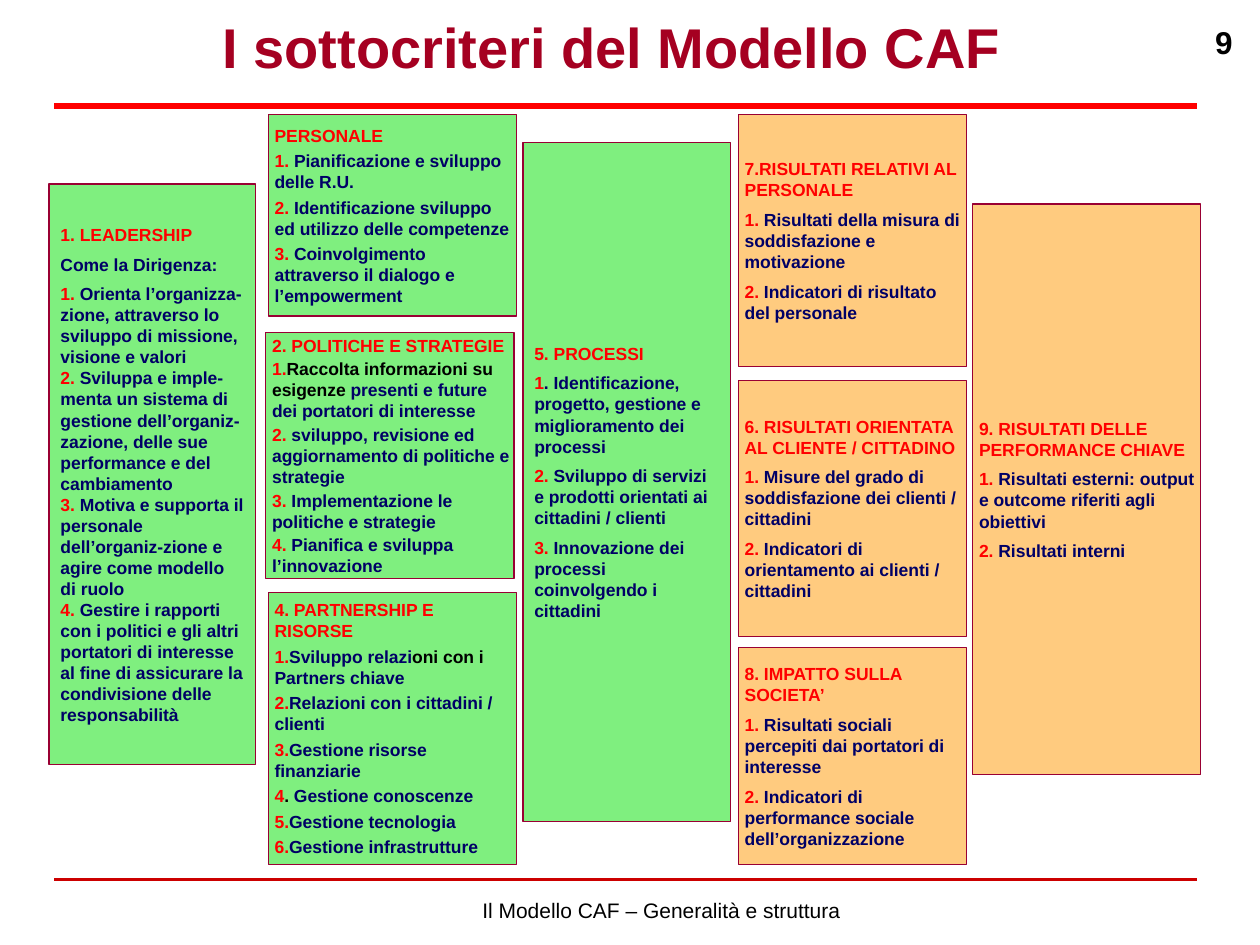
from dataclasses import dataclass
from typing import Any, NamedTuple

import lxml.etree
import pptx
import pptx.dml.color
import pptx.enum.shapes
import pptx.enum.text
import pptx.oxml.ns
import pptx.util

RGBColor = pptx.dml.color.RGBColor
PP_ALIGN = pptx.enum.text.PP_ALIGN
MSO_ANCHOR = pptx.enum.text.MSO_ANCHOR

RED = RGBColor(0xFF, 0x00, 0x00)
DARK_RED = RGBColor(0xCC, 0x00, 0x00)
CRIMSON = RGBColor(0xA5, 0x00, 0x21)
BORDER = RGBColor(0x99, 0x00, 0x33)
NAVY = RGBColor(0x00, 0x00, 0x66)
BLACK = RGBColor(0x00, 0x00, 0x00)
WHITE = RGBColor(0xFF, 0xFF, 0xFF)
GREEN = RGBColor(0x00, 0xE0, 0x00)
ORANGE = RGBColor(0xFF, 0x99, 0x00)

WIDTH = pptx.util.Inches(10)
HEIGHT = pptx.util.Inches(7.5)
FONT = "Arial"
BODY_SIZE = 10


class Run(NamedTuple):
    text: str
    color: RGBColor = NAVY


class Column(NamedTuple):
    left: float
    width: float


class Row(NamedTuple):
    top: float
    height: float


class Insets(NamedTuple):
    left: float
    top: float
    right: float
    bottom: float


class Paragraph(NamedTuple):
    runs: tuple[Run, ...]
    spacing: float | None = None


@dataclass(frozen=True)
class Criterion:
    column: Column
    row: Row
    fill: RGBColor
    insets: Insets
    spacing: float
    paragraphs: tuple[Paragraph, ...]


@dataclass(frozen=True)
class Label:
    text: str
    column: Column
    row: Row
    size: float
    color: RGBColor
    bold: bool
    align: Any
    anchor: Any


@dataclass(frozen=True)
class Rule:
    y: float
    color: RGBColor
    width: float


def heading(text: str) -> Paragraph:
    return Paragraph((Run(text, RED),))


def item(number: str, *runs: str | Run, spacing: float | None = None) -> Paragraph:
    texts = tuple(r if isinstance(r, Run) else Run(r) for r in runs)
    return Paragraph((Run(number, RED), *texts), spacing)


ROOMY = Insets(0.09, 0.04, 0.09, 0.04)
TIGHT = Insets(0.05, 0.01, 0.02, 0.01)
NARROW = Insets(0.05, 0.04, 0.02, 0.04)
STANDARD = Insets(0.1, 0.05, 0.1, 0.05)

LEADERSHIP = Column(0.039, 0.164)
ENABLERS = Column(0.213, 0.197)
STRATEGY = Column(0.211, 0.197)
PROCESSES = Column(0.415, 0.165)
RESULTS = Column(0.586, 0.181)
PERFORMANCE = Column(0.772, 0.181)


def share(inches: float) -> float:
    return inches / 7.5


def row(top: float, height: float) -> Row:
    return Row(share(top), share(height))


RULES = (Rule(share(0.84), RED, 3.5), Rule(share(6.98), DARK_RED, 1.5))

LABELS = (
    Label("Il Modello CAF – Generalità e struttura", Column(0.298, 0.454), row(7.07, 0.3),
          12, BLACK, False, PP_ALIGN.CENTER, MSO_ANCHOR.MIDDLE),
    Label("9", Column(0.933, 0.055), row(0.13, 0.5),
          18, BLACK, True, PP_ALIGN.RIGHT, MSO_ANCHOR.TOP),
    Label("I sottocriteri del Modello CAF", Column(0.039, 0.893), row(0.05, 0.63),
          32, CRIMSON, True, PP_ALIGN.CENTER, MSO_ANCHOR.TOP),
)

CRITERIA = (
    Criterion(LEADERSHIP, row(1.46, 4.61), GREEN, ROOMY, 0, (
        heading("1. LEADERSHIP"),
        Paragraph((Run("Come la Dirigenza:"),), 0.5),
        item("1.", " Orienta l’organizza-zione, attraverso lo sviluppo di missione, visione e valori",
             spacing=0.5),
        item("2.", " Sviluppa e imple-menta un sistema di gestione dell’organiz-zazione, "
             "delle sue performance e del cambiamento"),
        item("3.", " Motiva e supporta il personale dell’organiz-zazione e agire come modello di ruolo"
             .replace("zazione", "zione")),
        item("4.", " Gestire i rapporti con i politici e gli altri portatori di interesse "
             "al fine di assicurare la condivisione delle"),
        Paragraph((Run("responsabilità"),)))),
    Criterion(ENABLERS, row(0.91, 1.6), GREEN, TIGHT, 0.25, (
        heading("PERSONALE"),
        item("1. ", "Pianificazione e sviluppo delle R.U."),
        item("2. ", "Identificazione sviluppo ed utilizzo delle competenze"),
        item("3. ", "Coinvolgimento attraverso il dialogo e l’empowerment"))),
    Criterion(STRATEGY, row(2.64, 1.95), GREEN, TIGHT, 0.15, (
        heading("2. POLITICHE E STRATEGIE"),
        item("1.", Run("Raccolta informazioni su esigenze", BLACK),
             " presenti e future dei portatori di interesse"),
        item("2. ", "sviluppo, revisione ed aggiornamento di politiche e strategie"),
        item("3. ", "Implementazione le politiche e strategie"),
        item("4. ", "Pianifica e sviluppa l’innovazione"))),
    Criterion(ENABLERS, row(4.7, 2.16), GREEN, TIGHT, 0.25, (
        heading("4. PARTNERSHIP E RISORSE"),
        item("1.", "Sviluppo relazi", Run("oni con i ", BLACK), "Partners chiave"),
        item("2.", "Relazioni con i cittadini / clienti"),
        item("3.", "Gestione risorse finanziarie"),
        item("4", Run(". ", BLACK), "Gestione conoscenze"),
        item("5.", "Gestione tecnologia"),
        item("6.", "Gestione infrastrutture"))),
    Criterion(PROCESSES, row(1.13, 5.39), GREEN, ROOMY, 0.5, (
        heading("5. PROCESSI"),
        item("1", ". Identificazione, progetto, gestione e miglioramento dei processi"),
        item("2.", " Sviluppo di servizi e prodotti orientati ai cittadini / clienti"),
        item("3.", " Innovazione dei processi coinvolgendo i cittadini"))),
    Criterion(RESULTS, row(0.91, 2), ORANGE, NARROW, 0.5, (
        heading("7.RISULTATI RELATIVI AL PERSONALE"),
        item("1.", " Risultati della misura di soddisfazione e motivazione"),
        item("2.", " Indicatori di risultato del personale"))),
    Criterion(RESULTS, row(3.02, 2.03), ORANGE, NARROW, 0.5, (
        heading("6. RISULTATI ORIENTATA AL CLIENTE / CITTADINO"),
        item("1.", " Misure del grado di soddisfazione dei clienti / cittadini"),
        item("2.", " Indicatori di orientamento ai clienti / cittadini"))),
    Criterion(RESULTS, row(5.14, 1.72), ORANGE, NARROW, 0.5, (
        heading("8. IMPATTO SULLA SOCIETA’"),
        item("1.", " Risultati sociali percepiti dai portatori di interesse"),
        item("2.", " Indicatori di performance sociale dell’organizzazione"))),
    Criterion(PERFORMANCE, row(1.62, 4.53), ORANGE, NARROW, 0.5, (
        heading("9. RISULTATI DELLE PERFORMANCE CHIAVE"),
        item("1.", " Risultati esterni: output e outcome riferiti agli obiettivi"),
        item("2.", " Risultati interni"))),
)


def apply(target: Any, values: dict[str, Any]) -> None:
    for name, value in values.items():
        setattr(target, name, value)


def bounds(column: Column, row: Row) -> tuple[int, ...]:
    return (round(column.left * WIDTH), round(row.top * HEIGHT),
            round(column.width * WIDTH), round(row.height * HEIGHT))


def set_frame(tf: Any, insets: Insets, anchor: Any) -> None:
    margins = {f"margin_{side}": pptx.util.Inches(v) for side, v in insets._asdict().items()}
    apply(tf, {"word_wrap": True, "vertical_anchor": anchor, **margins})


def add_run(p: Any, run: Run, size: float, bold: bool) -> None:
    r = p.add_run()
    r.text = run.text
    apply(r.font, {"name": FONT, "size": pptx.util.Pt(size), "bold": bold})
    r.font.color.rgb = run.color


def draw_rule(s: Any, rule: Rule) -> None:
    y = round(rule.y * HEIGHT)
    line = s.shapes.add_connector(pptx.enum.shapes.MSO_CONNECTOR.STRAIGHT,
                                  round(0.043 * WIDTH), y, round(0.95 * WIDTH), y)
    line.line.color.rgb = rule.color
    line.line.width = pptx.util.Pt(rule.width)
    sp_pr = line._element.spPr
    lxml.etree.SubElement(sp_pr, pptx.oxml.ns.qn("a:effectLst"))


def draw_label(s: Any, label: Label) -> None:
    sp = s.shapes.add_textbox(*bounds(label.column, label.row))
    set_frame(sp.text_frame, STANDARD, label.anchor)
    p = sp.text_frame.paragraphs[0]
    p.alignment = label.align
    add_run(p, Run(label.text, label.color), label.size, label.bold)


def draw_criterion(s: Any, box: Criterion) -> None:
    sp = s.shapes.add_shape(pptx.enum.shapes.MSO_SHAPE.RECTANGLE, *bounds(box.column, box.row))
    sp.shadow.inherit = False
    sp.fill.solid()
    sp.fill.fore_color.rgb = box.fill
    color = sp._element.spPr.find(".//" + pptx.oxml.ns.qn("a:srgbClr"))
    lxml.etree.SubElement(color, pptx.oxml.ns.qn("a:alpha"), val="50000")
    sp.line.color.rgb = BORDER
    sp.line.width = pptx.util.Pt(0.75)
    tf = sp.text_frame
    set_frame(tf, box.insets, MSO_ANCHOR.MIDDLE)
    for i, paragraph in enumerate(box.paragraphs):
        p = tf.add_paragraph() if i else tf.paragraphs[0]
        spacing = box.spacing if paragraph.spacing is None else paragraph.spacing
        p.alignment = PP_ALIGN.LEFT
        p.space_before = pptx.util.Pt(spacing * BODY_SIZE if i else 0)
        for run in paragraph.runs:
            add_run(p, run, BODY_SIZE, True)


def main() -> None:
    prs = pptx.Presentation()
    apply(prs, {"slide_width": WIDTH, "slide_height": HEIGHT})
    s = prs.slides.add_slide(prs.slide_layouts[6])
    for draw, parts in ((draw_rule, RULES), (draw_label, LABELS), (draw_criterion, CRITERIA)):
        for part in parts:
            draw(s, part)
    prs.save("out.pptx")


if __name__ == "__main__":
    main()
